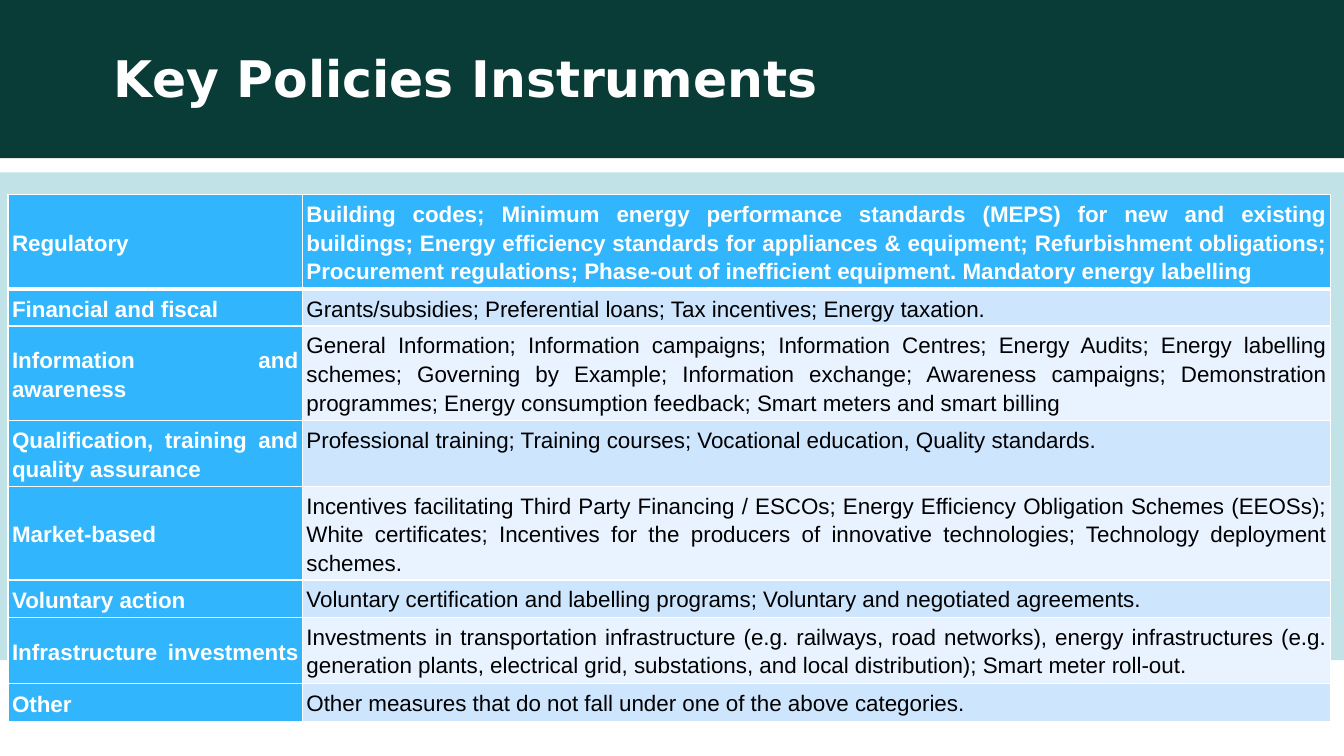
from dataclasses import dataclass

from lxml import etree
from pptx import Presentation
from pptx.dml.color import RGBColor
from pptx.enum.shapes import MSO_SHAPE
from pptx.enum.text import MSO_ANCHOR, MSO_AUTO_SIZE, PP_ALIGN
from pptx.oxml.ns import qn
from pptx.util import Inches, Pt

RECTANGLE = MSO_SHAPE.RECTANGLE
TOP, MIDDLE = MSO_ANCHOR.TOP, MSO_ANCHOR.MIDDLE
LEFT, JUSTIFY = PP_ALIGN.LEFT, PP_ALIGN.JUSTIFY
NO_AUTOFIT = MSO_AUTO_SIZE.NONE
TITLE_ONLY = 5


@dataclass(frozen=True)
class Theme:
    header_band: str = "093B37"
    body_band: str = "C1E3E8"
    accent: str = "31B6FD"
    row_tints: tuple = ("E8F3FF", "CEE5FE")
    light: str = "FFFFFF"
    dark: str = "000000"
    title_font: str = "DejaVu Sans"
    table_font: str = "Arial"
    title_size: int = 36
    table_size: int = 16
    thin_border: int = 1
    thick_border: int = 3


THEME = Theme()
SLIDE_WIDTH = 13.33
COLUMN_WIDTHS = (2.92, 10.2)
CELL_MARGIN = 0.04

# Category, instruments, row height
POLICIES = (
    ("Regulatory",
     "Building codes; Minimum energy performance standards (MEPS) for new and existing "
     "buildings; Energy efficiency standards for appliances & equipment; Refurbishment "
     "obligations; Procurement regulations; Phase-out of inefficient equipment. "
     "Mandatory energy labelling", 0.94),
    ("Financial and fiscal",
     "Grants/subsidies; Preferential loans; Tax incentives; Energy taxation.", 0.36),
    ("Information and awareness",
     "General Information; Information campaigns; Information Centres; Energy Audits; "
     "Energy labelling schemes; Governing by Example; Information exchange; Awareness "
     "campaigns; Demonstration programmes; Energy consumption feedback; Smart meters "
     "and smart billing", 0.94),
    ("Qualification, training and quality assurance",
     "Professional training; Training courses; Vocational education, Quality standards.",
     0.65),
    ("Market-based",
     "Incentives facilitating Third Party Financing / ESCOs; Energy Efficiency Obligation "
     "Schemes (EEOSs); White certificates; Incentives for the producers of innovative "
     "technologies; Technology deployment schemes.", 0.93),
    ("Voluntary action",
     "Voluntary certification and labelling programs; Voluntary and negotiated agreements.",
     0.37),
    ("Infrastructure investments ",
     "Investments in transportation infrastructure (e.g. railways, road networks), energy "
     "infrastructures (e.g. generation plants, electrical grid, substations, and local "
     "distribution); Smart meter roll-out.", 0.66),
    ("Other",
     "Other measures that do not fall under one of the above categories.", 0.37),
)


def set_font(paragraph, name, size, color, bold):
    font = paragraph.font
    font.name, font.size, font.bold = name, Pt(size), bold
    font.color.rgb = RGBColor.from_string(color)


def add_band(slide, top, height, color):
    """Draw a full-width band behind the title."""
    band = slide.shapes.add_shape(
        RECTANGLE, 0, Inches(top), Inches(SLIDE_WIDTH), Inches(height))
    band.shadow.inherit = False
    band.fill.solid()
    band.fill.fore_color.rgb = RGBColor.from_string(color)
    band.line.fill.background()
    slide.shapes.title.element.addprevious(band.element)


def write_title(slide, text):
    title = slide.shapes.title
    title.left, title.top = Inches(1.03), Inches(0.49)
    title.width, title.height = Inches(11.92), Inches(1.09)
    frame = title.text_frame
    frame.text = text
    frame.word_wrap = True
    frame.auto_size = NO_AUTOFIT
    frame.vertical_anchor = TOP
    heading = frame.paragraphs[0]
    heading.alignment = LEFT
    heading.line_spacing = 0.9
    heading.space_before = Pt(0)
    set_font(heading, THEME.title_font, THEME.title_size, THEME.light, True)


def set_borders(cell, top, bottom):
    properties = cell._tc.get_or_add_tcPr()
    thin = THEME.thin_border
    for side, width in (("L", thin), ("R", thin), ("T", top), ("B", bottom)):
        border = etree.SubElement(properties, qn(f"a:ln{side}"), w=str(Pt(width)))
        solid = etree.SubElement(border, qn("a:solidFill"))
        etree.SubElement(solid, qn("a:srgbClr"), val=THEME.light)


def write_cell(cell, text, anchor, fill, color, bold):
    cell.fill.solid()
    cell.fill.fore_color.rgb = RGBColor.from_string(fill)
    cell.vertical_anchor = anchor
    cell.margin_left = cell.margin_right = Inches(CELL_MARGIN)
    cell.margin_top = cell.margin_bottom = Inches(CELL_MARGIN)
    cell.text = text
    paragraph = cell.text_frame.paragraphs[0]
    paragraph.alignment = JUSTIFY
    paragraph.line_spacing = 1.15
    paragraph.space_after = Pt(10)
    set_font(paragraph, THEME.table_font, THEME.table_size, color, bold)


def add_policy_table(slide):
    total_height = sum(height for _, _, height in POLICIES)
    table = slide.shapes.add_table(
        len(POLICIES), len(COLUMN_WIDTHS), Inches(0.08), Inches(1.93),
        Inches(sum(COLUMN_WIDTHS)), Inches(total_height)).table
    for column, width in zip(table.columns, COLUMN_WIDTHS):
        column.width = Inches(width)

    for index, (category, instruments, height) in enumerate(POLICIES):
        table.rows[index].height = Inches(height)
        # The first row and first column are emphasised; other rows alternate tints
        emphasised = (THEME.accent, THEME.light, True)
        plain = (THEME.row_tints[index % 2], THEME.dark, False)
        top = THEME.thick_border if index == 1 else THEME.thin_border
        bottom = THEME.thick_border if index == 0 else THEME.thin_border
        category_cell, instruments_cell = table.rows[index].cells
        for cell in (category_cell, instruments_cell):
            set_borders(cell, top, bottom)
        write_cell(category_cell, category, MIDDLE, *emphasised)
        write_cell(instruments_cell, instruments, TOP,
                   *(emphasised if index == 0 else plain))


def main():
    presentation = Presentation()
    presentation.slide_width = Inches(SLIDE_WIDTH)
    presentation.slide_height = Inches(7.5)
    slide = presentation.slides.add_slide(presentation.slide_layouts[TITLE_ONLY])

    # Background bands
    add_band(slide, 1.71, 4.84, THEME.body_band)
    add_band(slide, 0, 1.57, THEME.header_band)

    # Title and policy table
    write_title(slide, "Key Policies Instruments")
    add_policy_table(slide)

    presentation.save("out.pptx")


if __name__ == "__main__":
    main()
